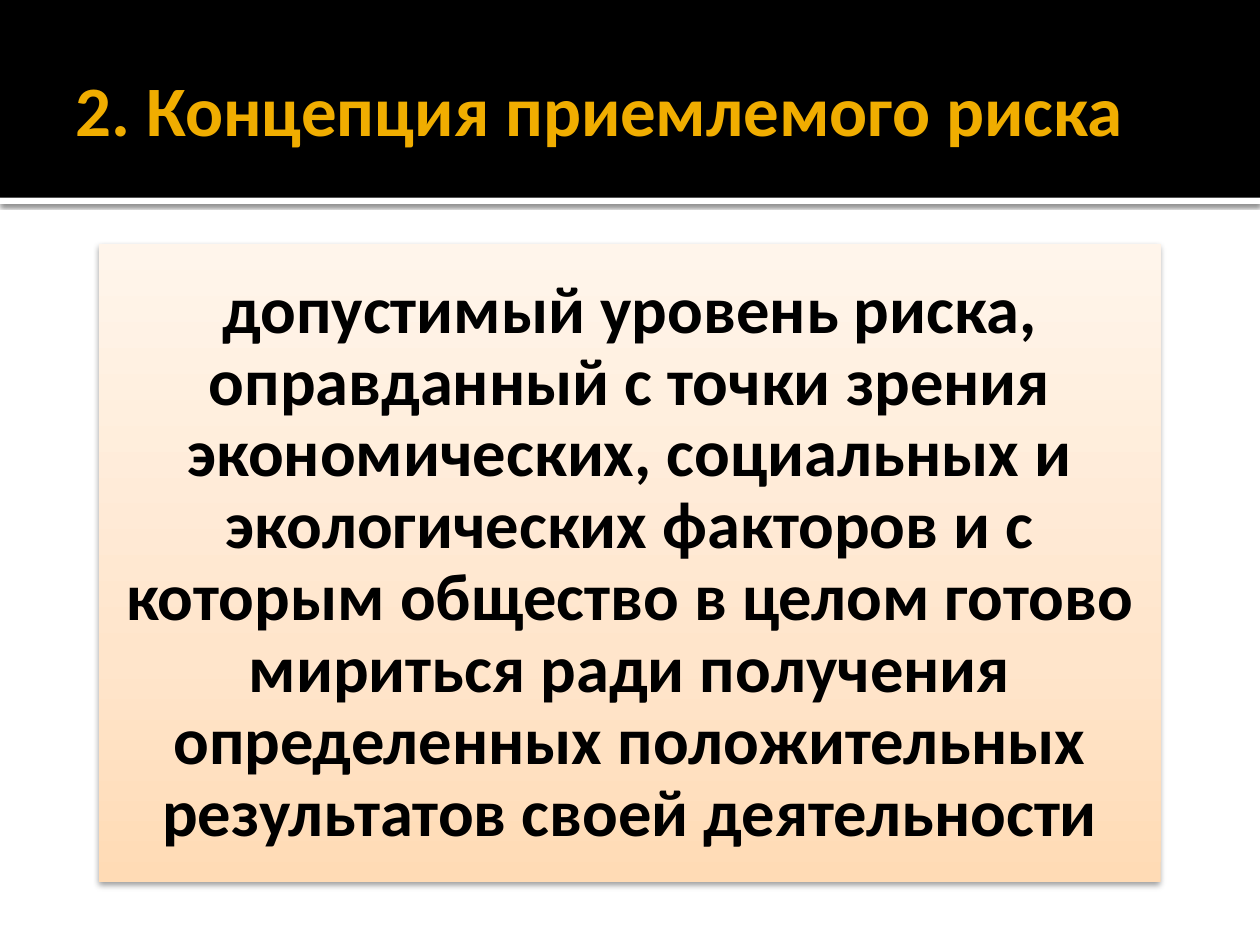
from copy import deepcopy

from lxml.etree import SubElement
from pptx import Presentation
from pptx.dml.color import RGBColor
from pptx.enum.shapes import MSO_SHAPE as Shape
from pptx.enum.text import MSO_ANCHOR as Anchor, PP_ALIGN as Align
from pptx.oxml.ns import qn
from pptx.util import Pt

COLORS = {"black": "000000", "white": "FFFFFF", "gold": "F0AD00"}
PANEL_STOPS = [(0, "FFDBB5"), (0.35, "FFE5CB"), (1, "FFF5EB")]
TITLE = "2. Концепция приемлемого риска"
DEFINITION = (
    "допустимый уровень риска, оправданный с точки зрения экономических, "
    "социальных и экологических факторов и с которым общество в целом готово "
    "мириться ради получения определенных положительных результатов своей деятельности"
)

WIDTH, HEIGHT = 720, 540
HEADER_HEIGHT, STRIP_HEIGHT = 113, 3.6
TITLE_AREA = (36, 12.24, 648, 98.64)
PANEL_AREA = (56.7, 139.7, WIDTH - 2 * 56.7, 364.3)


def add_block(page, area, color=None):
    block = page.shapes.add_shape(Shape.RECTANGLE, *map(Pt, area))
    block.shadow.inherit = False
    block.line.fill.background()
    if color:
        block.fill.solid()
        block.fill.fore_color.rgb = RGBColor.from_string(COLORS[color])
    return block


def add_shadow(block, opacity, blur, distance):
    effects = block._element.spPr.find(qn("a:effectLst"))
    shadow = SubElement(effects, qn("a:outerShdw"), blurRad=str(Pt(blur)),
                        dist=str(Pt(distance)), dir="5400000", rotWithShape="0")
    color = SubElement(shadow, qn("a:srgbClr"), val=COLORS["black"])
    SubElement(color, qn("a:alpha"), val=str(opacity * 1000))


def fill_gradient(block, stops):
    fill = block.fill
    fill.gradient()
    fill.gradient_angle = 90
    stop_list = block._element.spPr.find(qn("a:gradFill")).find(qn("a:gsLst"))
    stop_list.append(deepcopy(stop_list[-1]))
    for stop, (position, color) in zip(fill.gradient_stops, stops):
        stop.position = position
        stop.color.rgb = RGBColor.from_string(color)


def add_text(page, area, text, color, size, insets, paragraph_format):
    box = page.shapes.add_textbox(*map(Pt, area))
    frame = box.text_frame
    frame.word_wrap = True
    frame.vertical_anchor = Anchor.MIDDLE
    for side, inset in zip(("left", "top", "right", "bottom"), insets):
        setattr(frame, f"margin_{side}", Pt(inset))
    para = frame.paragraphs[0]
    for name, value in paragraph_format.items():
        setattr(para, name, value)
    span = para.add_run()
    span.text = text
    for name, value in {"name": "Calibri", "size": Pt(size), "bold": True}.items():
        setattr(span.font, name, value)
    span.font.color.rgb = RGBColor.from_string(COLORS[color])


def main():
    deck = Presentation()
    deck.slide_width, deck.slide_height = Pt(WIDTH), Pt(HEIGHT)
    page = deck.slides.add_slide(deck.slide_layouts[6])

    strip = add_block(page, (0, HEADER_HEIGHT, WIDTH, STRIP_HEIGHT), "white")
    add_shadow(strip, 60, 2.5, 0.8)
    add_block(page, (0, 0, WIDTH, HEADER_HEIGHT), "black")
    add_text(page, TITLE_AREA, TITLE, "gold", 40.5, (7.2, 3.6, 3.6, 3.6),
             {"alignment": Align.LEFT})

    panel = add_block(page, PANEL_AREA)
    fill_gradient(panel, PANEL_STOPS)
    add_shadow(panel, 38, 3.5, 2)
    add_text(page, PANEL_AREA, DEFINITION, "black", 38, (11.4,) * 4,
             {"alignment": Align.CENTER, "line_spacing": 0.9})

    deck.save("out.pptx")


if __name__ == "__main__":
    main()
